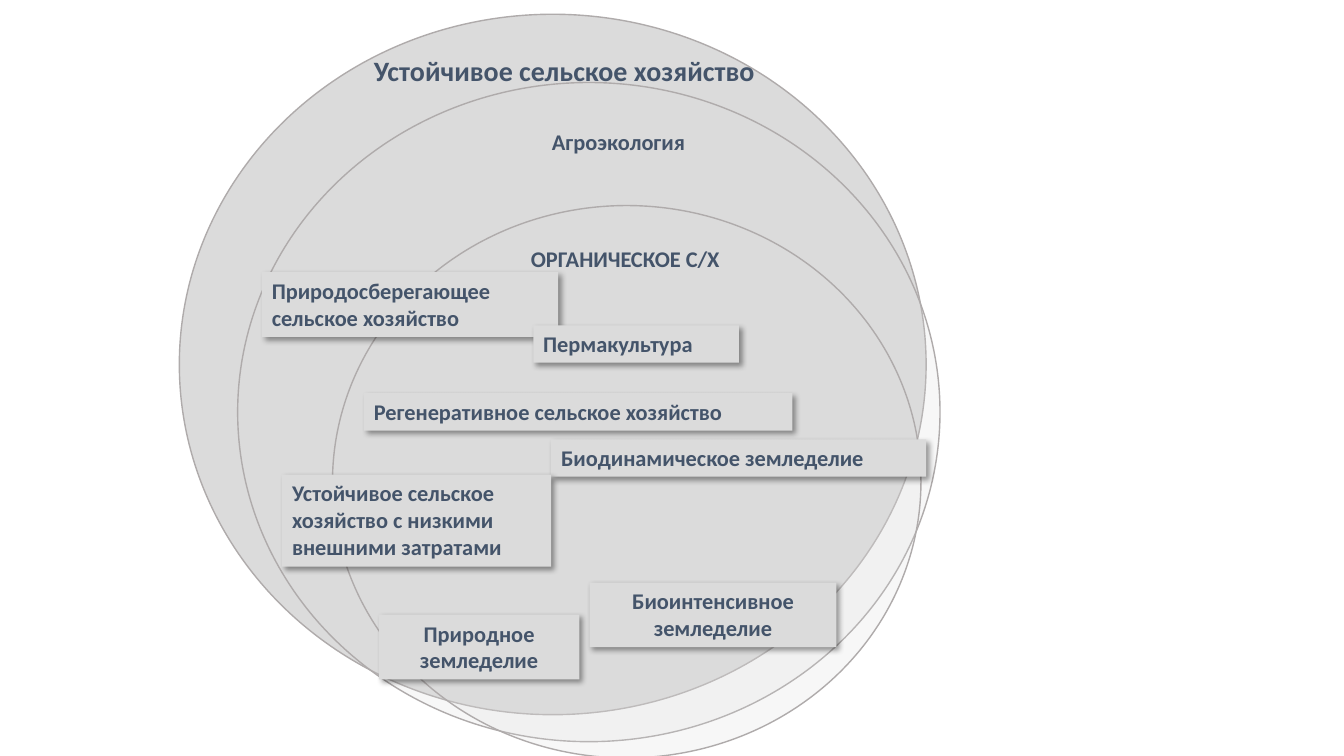
from lxml import etree
from pptx import Presentation
from pptx.dml.color import RGBColor
from pptx.enum import shapes, text
from pptx.oxml import ns
from pptx.util import Cm, Pt

HUES = {"fill": "DBDBDB", "edge": "AFABAB", "ink": "44546A", "shade": "000000"}
LINE = 0.69  # height of one line of 16 pt text, cm
PAD = 0.25   # top and bottom insets together, cm

# box (left, top, width, height), fill opacity, label, label box within the ring, size
RINGS = [
    ((4.52, 0.36, 18.82, 17.65), 100, "Устойчивое сельское хозяйство",
     (4.65, 0.86, 10.19, 1.12), 20, False),
    ((5.99, 2.08, 17.7, 16.61), 20, "Агроэкология",
     (7.67, 1.02, 5.08, 0.94), 16, True),
    ((8.38, 5.18, 14.83, 13.92), 20, "ОРГАНИЧЕСКОЕ С/Х",
     (4.75, 0.86, 5.33, 0.94), 16, False),
]

# left, top, width, number of lines, centred, wording
TAGS = [
    (9.17, 9.91, 10.8, 1, False, "Регенеративное сельское хозяйство"),
    (13.89, 11.07, 9.45, 1, False, "Биодинамическое земледелие"),
    (9.55, 15.49, 5.05, 2, True, "Природное земледелие"),
    (6.6, 6.86, 7.47, 2, False, "Природосберегающее сельское хозяйство"),
    (7.11, 11.96, 6.78, 3, False,
     "Устойчивое сельское хозяйство с низкими внешними затратами"),
    (13.44, 8.2, 5.18, 1, False, "Пермакультура"),
    (14.86, 14.68, 6.22, 2, True, "Биоинтенсивное земледелие"),
]


def hue(name):
    return RGBColor.from_string(HUES[name])


def write(shape, words, size=16, wrap=True, center=False):
    frame = shape.text_frame
    frame.word_wrap = wrap
    frame.auto_size = text.MSO_AUTO_SIZE.SHAPE_TO_FIT_TEXT
    frame.vertical_anchor = text.MSO_ANCHOR.TOP
    para = frame.paragraphs[0]
    para.alignment = text.PP_ALIGN.CENTER if center else text.PP_ALIGN.LEFT
    run = para.add_run()
    run.text = words
    font = run.font
    font.name, font.size, font.bold = "Calibri", Pt(size), True
    font.color.rgb = hue("ink")


def draw(parent, kind, box):
    """Add a flat grey shape without a line."""
    shape = parent.add_shape(kind, *map(Cm, box))
    shape.shadow.inherit = False
    shape.fill.solid()
    shape.fill.fore_color.rgb = hue("fill")
    shape.line.fill.background()
    return shape


def fade(color, share):
    """Set the opacity of a colour element, in percent."""
    etree.SubElement(color, ns.qn("a:alpha"), val=str(share * 1000))


def shade(shape):
    """Drop a soft shadow to the lower right."""
    effects = shape.element.spPr.find(ns.qn("a:effectLst"))
    drop = etree.SubElement(
        effects, ns.qn("a:outerShdw"), blurRad=str(Pt(4)), dist=str(Pt(3)),
        dir=str(45 * 60000), algn="tl", rotWithShape="0")
    fade(etree.SubElement(drop, ns.qn("a:srgbClr"), val=HUES["shade"]), 40)


def ring(slide, box, share, words, inner, size, wrap):
    group = slide.shapes.add_group_shape().shapes
    disc = draw(group, shapes.MSO_SHAPE.OVAL, box)
    disc.line.color.rgb = hue("edge")
    disc.line.width = Pt(1)
    if share < 100:
        fade(disc.element.spPr.find(".//" + ns.qn("a:srgbClr")), share)
    left, top, width, height = inner
    place = (box[0] + left, box[1] + top, width, height)
    label = group.add_textbox(*map(Cm, place))
    write(label, words, size=size, wrap=wrap)


def tag(slide, left, top, width, lines, center, words):
    box = (left, top, width, PAD + LINE * lines)
    card = draw(slide.shapes, shapes.MSO_SHAPE.RECTANGLE, box)
    shade(card)
    write(card, words, center=center)


def main():
    deck = Presentation()
    deck.slide_width, deck.slide_height = Cm(33.87), Cm(19.05)
    slide = deck.slides.add_slide(deck.slide_layouts[6])
    for item in RINGS:
        ring(slide, *item)
    for item in TAGS:
        tag(slide, *item)
    deck.save("out.pptx")


if __name__ == "__main__":
    main()
